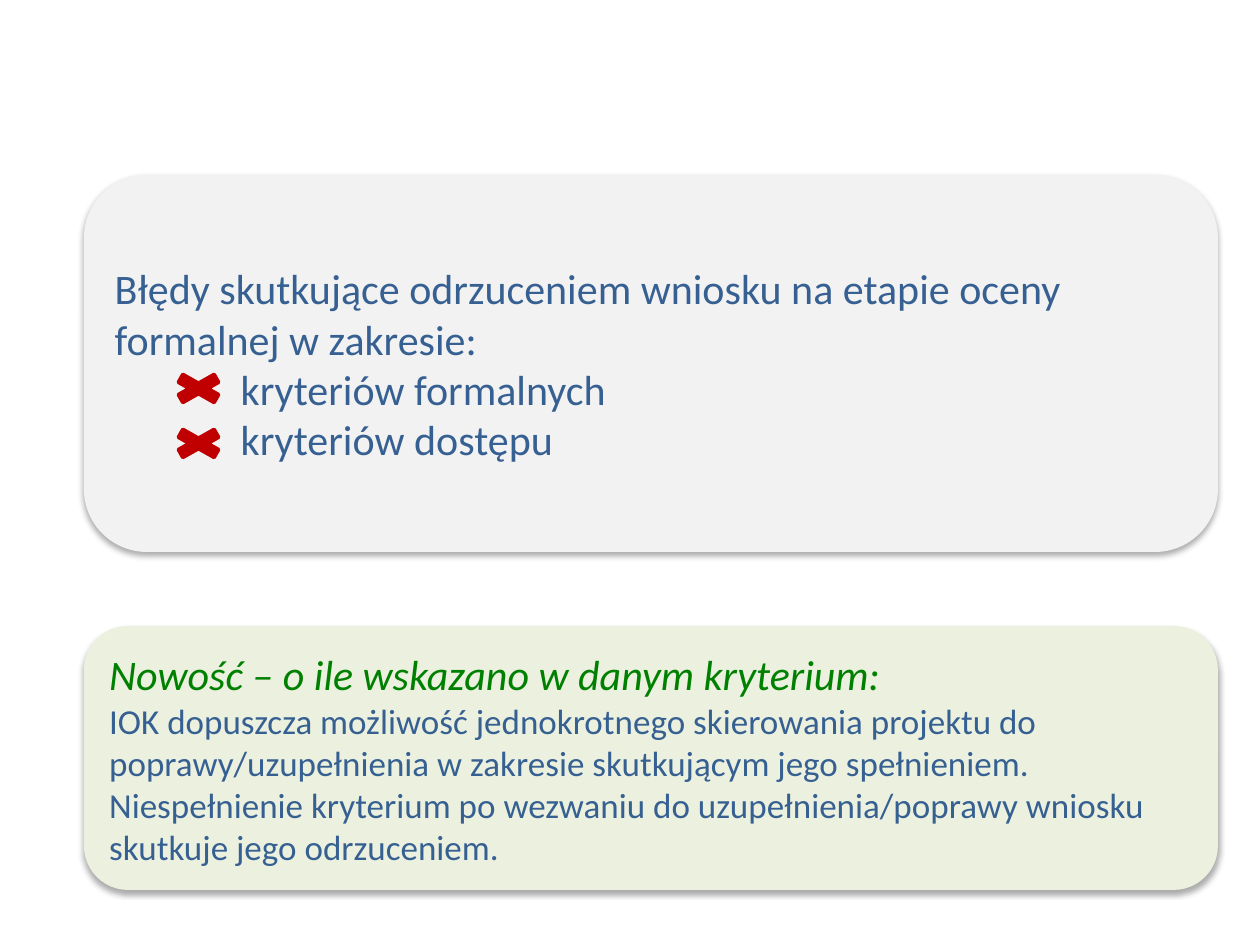
from dataclasses import dataclass

from lxml import etree
from pptx import Presentation
from pptx import util as u
from pptx.dml.color import RGBColor
from pptx.enum import shapes, text
from pptx.oxml.ns import qn

EMU_PER_PX = 914400 / 126
ITEM_TAB = 126


@dataclass(frozen=True)
class Theme:
    font: str = "Calibri"
    blue: str = "376092"
    green: str = "008000"
    red: str = "C00000"
    grey_panel: str = "F2F2F2"
    green_panel: str = "EBF1DE"
    shadow: str = "000000"
    large: int = 24
    body: int = 20


THEME = Theme()


def px(length):
    return u.Emu(round(length * EMU_PER_PX))


def add_filled_shape(page, kind, frame, color):
    shape = page.shapes.add_shape(kind, *map(px, frame))
    shape.shadow.inherit = False
    shape.fill.solid()
    shape.fill.fore_color.rgb = RGBColor.from_string(color)
    return shape


def add_soft_shadow(shape):
    """Fill the empty effect list with a shadow that falls straight down."""
    effects = shape._element.spPr.find(qn("a:effectLst"))
    shadow = etree.SubElement(
        effects, qn("a:outerShdw"), blurRad=str(u.Pt(3.5)), dist=str(u.Pt(2.2)),
        dir="5400000", rotWithShape="0")
    color = etree.SubElement(shadow, qn("a:srgbClr"), val=THEME.shadow)
    etree.SubElement(color, qn("a:alpha"), val="32000")


def add_tab_stop(para, position):
    stops = etree.SubElement(para._p.get_or_add_pPr(), qn("a:tabLst"))
    etree.SubElement(stops, qn("a:tab"), pos=str(px(position)), algn="l")


def add_panel(page, frame, color, lines):
    """Add a rounded panel; each line is (wording, size, color, italic)."""
    panel = add_filled_shape(page, shapes.MSO_SHAPE.ROUNDED_RECTANGLE, frame, color)
    panel.line.fill.background()
    add_soft_shadow(panel)
    box = panel.text_frame
    box.word_wrap = True
    box.vertical_anchor = text.MSO_ANCHOR.MIDDLE
    for index, (wording, size, ink, italic) in enumerate(lines):
        para = box.add_paragraph() if index else box.paragraphs[0]
        para.alignment = text.PP_ALIGN.LEFT
        if wording.startswith("\t"):
            add_tab_stop(para, ITEM_TAB)
        span = para.add_run()
        span.text = wording
        span.font.name = THEME.font
        span.font.size = u.Pt(size)
        span.font.italic = italic
        span.font.color.rgb = RGBColor.from_string(ink)


def add_cross(page, top):
    cross = add_filled_shape(
        page, shapes.MSO_SHAPE.MATH_MULTIPLY, (164, top, 69, 39), THEME.red)
    cross.line.color.rgb = RGBColor.from_string(THEME.red)
    cross.line.width = u.Pt(2)


def main():
    deck = Presentation()
    deck.slide_width, deck.slide_height = px(1260), px(945)
    page = deck.slides.add_slide(deck.slide_layouts[6])

    errors = (
        "Błędy skutkujące odrzuceniem wniosku na etapie oceny formalnej w zakresie:",
        "\tkryteriów formalnych",
        "\tkryteriów dostępu",
    )
    add_panel(page, (84, 175, 1134, 377), THEME.grey_panel,
              [(line, THEME.large, THEME.blue, False) for line in errors])

    correction = (
        "IOK dopuszcza możliwość jednokrotnego skierowania projektu do",
        "poprawy/uzupełnienia w zakresie skutkującym jego spełnieniem. "
        "Niespełnienie kryterium po wezwaniu do uzupełnienia/poprawy wniosku "
        "skutkuje jego odrzuceniem.",
    )
    heading = ("Nowość – o ile wskazano w danym kryterium:",
               THEME.large, THEME.green, True)
    add_panel(page, (84, 626, 1134, 264), THEME.green_panel,
              [heading] + [(line, THEME.body, THEME.blue, False) for line in correction])

    for top in (369, 424):
        add_cross(page, top)

    deck.save("out.pptx")


if __name__ == "__main__":
    main()
